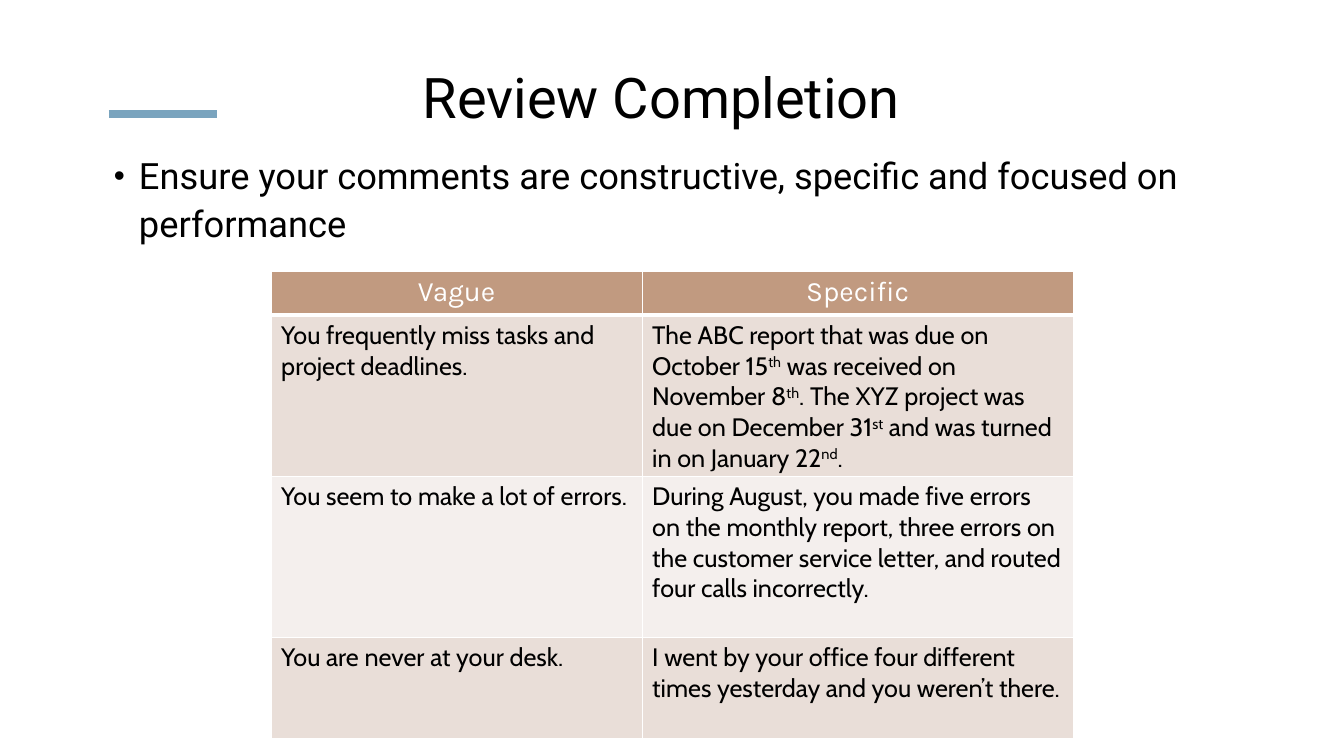
from pptx import Presentation
from pptx.dml.color import RGBColor as RGB
from pptx.enum.shapes import MSO_CONNECTOR as LINE
from pptx.enum.text import MSO_ANCHOR as ANCHOR, PP_ALIGN as ALIGN
from pptx.oxml.ns import qn
from pptx.util import Pt
from lxml.etree import SubElement as sub

HUES = {"ink": "000000", "white": "FFFFFF", "accent": "7AA4BE",
        "head": "C19A80", "odd": "E9DED8", "even": "F4EFED"}
COLS = [265, 308]
ROWS = [30.2, 114.5, 115.2, 72]
CELLS = [
    ("Vague", "Specific"),
    ("You frequently miss tasks and project deadlines.",
     "The ABC report that was due on October 15^th^ was received on "
     "November 8^th^. The XYZ project was due on December 31^st^ and was "
     "turned in on January 22^nd^."),
    ("You seem to make a lot of errors.",
     "During August, you made five errors on the monthly report, three errors "
     "on the customer service letter, and routed four calls incorrectly."),
    ("You are never at your desk.",
     "I went by your office four different times yesterday and you "
     "weren’t there."),
]


def hue(name):
    """Return the named colour."""
    return RGB.from_string(HUES[name])


def write(para, text, face, size, ink="ink", align=ALIGN.LEFT):
    """Fill a paragraph, raising the parts between carets."""
    for i, part in enumerate(text.split("^")):
        run = para.add_run()
        run.text = part
        if i % 2:
            run._r.get_or_add_rPr().set("baseline", "30000")
    para.alignment = align
    font = para.font
    font.name, font.size = face, Pt(size)
    font.color.rgb = hue(ink)


def add_box(slide, box, anchor):
    """Add a wrapping text box and return its first paragraph."""
    frame = slide.shapes.add_textbox(*map(Pt, box)).text_frame
    frame.word_wrap = True
    frame.vertical_anchor = anchor
    return frame.paragraphs[0]


def add_title(slide, box):
    """Add the centred heading."""
    para = add_box(slide, box, ANCHOR.MIDDLE)
    write(para, "Review Completion", "Roboto", 40, align=ALIGN.CENTER)


def add_rule(slide, x, y, width):
    """Add the accent line beside the heading."""
    rule = slide.shapes.add_connector(
        LINE.STRAIGHT, Pt(x), Pt(y), Pt(x + width), Pt(y))
    rule.line.width = Pt(6)
    rule.line.color.rgb = hue("accent")
    sub(rule._element.spPr, qn("a:effectLst"))


def add_point(slide, box):
    """Add the bulleted advice."""
    para = add_box(slide, box, ANCHOR.TOP)
    write(para, "Ensure your comments are constructive, specific and focused "
          "on performance", "Roboto", 25.9)
    para.line_spacing = 1.1
    para.space_before = Pt(10)
    props = para._p.get_or_add_pPr()
    props.set("marL", str(Pt(18)))
    props.set("indent", str(-Pt(18)))
    size = sub(props, qn("a:buSzPct"), val="87000")
    font = sub(props, qn("a:buFont"), typeface="Arial")
    mark = sub(props, qn("a:buChar"), char="•")
    for tag in (size, font, mark):
        props.find(qn("a:defRPr")).addprevious(tag)


def add_edges(cell, base):
    """Draw white borders, with the given width at the base."""
    props = cell._tc.get_or_add_tcPr()
    for i, side in enumerate("LRTB"):
        width = base if side == "B" else 1
        edge = sub(props, qn(f"a:ln{side}"), w=str(Pt(width)))
        fill = sub(edge, qn("a:solidFill"))
        sub(fill, qn("a:srgbClr"), val=HUES["white"])
        props.insert(i, edge)


def add_grid(slide, x, y):
    """Add the table of vague and specific comments."""
    grid = slide.shapes.add_table(
        len(ROWS), len(COLS), Pt(x), Pt(y), Pt(sum(COLS)), Pt(sum(ROWS))).table
    for col, width in zip(grid.columns, COLS):
        col.width = Pt(width)
    for r, (row, high) in enumerate(zip(grid.rows, ROWS)):
        row.height = Pt(high)
        for cell, text in zip(row.cells, CELLS[r]):
            para = cell.text_frame.paragraphs[0]
            cell.fill.solid()
            if r == 0:
                tone = "head"
                write(para, text, "Karla", 20, "white", ALIGN.CENTER)
                para.font.bold = False
            else:
                tone = "odd" if r % 2 else "even"
                write(para, text, "Cabin", 18)
            cell.fill.fore_color.rgb = hue(tone)
            add_edges(cell, 1 if r else 3)


def main():
    """Build and save the slide."""
    deck = Presentation()
    deck.slide_width, deck.slide_height = Pt(960), Pt(540)
    slide = deck.slides.add_slide(deck.slide_layouts[6])
    add_rule(slide, 77.8, 81.4, 77)
    add_title(slide, (254.9, 41.8, 434.9, 53.3))
    add_point(slide, (74.2, 103, 796.3, 77))
    add_grid(slide, 193.7, 193.7)
    deck.save("out.pptx")


if __name__ == "__main__":
    main()
